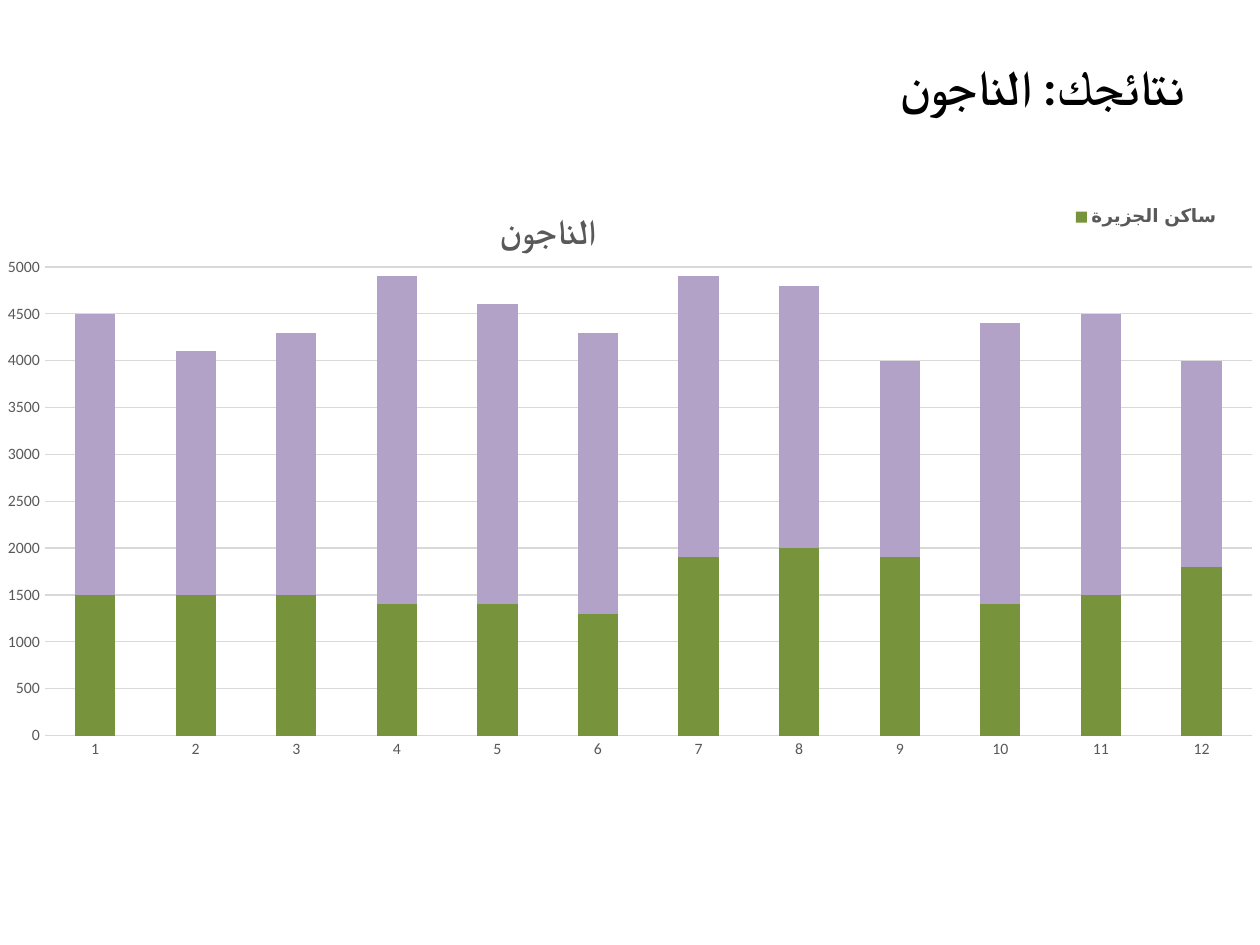
from lxml import etree
from pptx import Presentation
from pptx.chart.data import CategoryChartData
from pptx.dml.color import RGBColor
from pptx.enum.chart import XL_CHART_TYPE as ChartType
from pptx.enum.chart import XL_LEGEND_POSITION as LegendPosition
from pptx.enum.chart import XL_TICK_MARK as TickMark
from pptx.enum.text import MSO_ANCHOR as Anchor
from pptx.enum.text import PP_ALIGN as Align
from pptx.oxml.ns import qn
from pptx.util import Cm, Pt

COLORS = {
    "black": "000000",
    "gray": "595959",
    "grid": "D9D9D9",
    "green": "77933C",
    "purple": "B3A2C7",
}


def write_text(text_frame, text, size, font, color, align=None):
    """Write one bold right-to-left paragraph."""
    paragraph = text_frame.paragraphs[0]
    paragraph._p.get_or_add_pPr().set("rtl", "1")
    if align is not None:
        paragraph.alignment = align
    run = paragraph.add_run()
    run.text = text
    run.font.size = Pt(size)
    run.font.bold = True
    run.font.name = font
    run.font.color.rgb = RGBColor.from_string(COLORS[color])
    # Arabic letters take the complex-script font
    etree.SubElement(run._r.get_or_add_rPr(), qn("a:cs")).set("typeface", font)


def place(element, index, **settings):
    """Give a chart part a manual layout, as fractions of the chart."""
    for old_layout in element.findall(qn("c:layout")):
        element.remove(old_layout)
    layout = etree.Element(qn("c:layout"))
    manual = etree.SubElement(layout, qn("c:manualLayout"))
    for name, value in settings.items():
        etree.SubElement(manual, qn(f"c:{name}")).set("val", str(value))
    element.insert(index, layout)


presentation = Presentation()
presentation.slide_width = Cm(25.4)
presentation.slide_height = Cm(19.05)
slide = presentation.slides.add_slide(presentation.slide_layouts[6])

# Slide title
title_box = slide.shapes.add_textbox(Cm(1.27), Cm(0.15), Cm(22.86), Cm(3.18))
title_box.text_frame.word_wrap = True
title_box.text_frame.vertical_anchor = Anchor.MIDDLE
write_text(title_box.text_frame, "نتائجك: الناجون", size=28, font="Calibri",
           color="black", align=Align.RIGHT)

# Stacked column chart; the upper series has no name
data = CategoryChartData()
data.categories = [str(number) for number in range(1, 13)]
data.add_series("ساكن الجزيرة", [1500, 1500, 1500, 1400, 1400, 1300,
                                 1900, 2000, 1900, 1400, 1500, 1800])
data.add_series("", [3000, 2600, 2800, 3500, 3200, 3000,
                     3000, 2800, 2100, 3000, 3000, 2200])
chart = slide.shapes.add_chart(ChartType.COLUMN_STACKED, Cm(0.15), Cm(3.73),
                               Cm(25.1), Cm(11.81), data).chart
chart.font.name = "Calibri"
chart.font.size = Pt(10)
chart.font.color.rgb = RGBColor.from_string(COLORS["black"])
plot = chart.plots[0]
plot.vary_by_categories = False
plot.gap_width = 150
plot.overlap = 100
for series, color in zip(plot.series, ("green", "purple")):
    series.format.fill.solid()
    series.format.fill.fore_color.rgb = RGBColor.from_string(COLORS[color])
place(chart._chartSpace.chart.plotArea, 0, layoutTarget="inner", xMode="edge",
      yMode="edge", x=0.03, y=0.14, w=0.97, h=0.8)

# Axes
for axis in (chart.category_axis, chart.value_axis):
    axis.major_tick_mark = TickMark.NONE
    axis.minor_tick_mark = TickMark.NONE
    axis.format.line.fill.background()
    axis.tick_labels.font.name = "Calibri"
    axis.tick_labels.font.size = Pt(9)
    axis.tick_labels.font.color.rgb = RGBColor.from_string(COLORS["gray"])
chart.value_axis.maximum_scale = 5000
chart.value_axis.minimum_scale = 0
chart.value_axis.major_unit = 500
gridline = chart.value_axis.major_gridlines.format.line
gridline.width = Pt(0.75)
gridline.color.rgb = RGBColor.from_string(COLORS["grid"])

# Chart title
write_text(chart.chart_title.text_frame, "الناجون", size=20, font="Cambria",
           color="gray")
place(chart.chart_title._element, 1, xMode="edge", yMode="edge", x=0.39, y=0.03)

# Legend, with an entry for the named series only
chart.has_legend = True
legend = chart.legend
legend.position = LegendPosition.BOTTOM
legend.include_in_layout = False
legend.font.name = "Cambria"
legend.font.size = Pt(10.5)
legend.font.bold = True
legend.font.color.rgb = RGBColor.from_string(COLORS["gray"])
place(legend._element, 1, xMode="edge", yMode="edge", x=0.85, y=0.03, w=0.13, h=0.05)
unnamed_entry = etree.Element(qn("c:legendEntry"))
etree.SubElement(unnamed_entry, qn("c:idx")).set("val", "1")
etree.SubElement(unnamed_entry, qn("c:delete")).set("val", "1")
legend._element.insert(1, unnamed_entry)

presentation.save("out.pptx")
